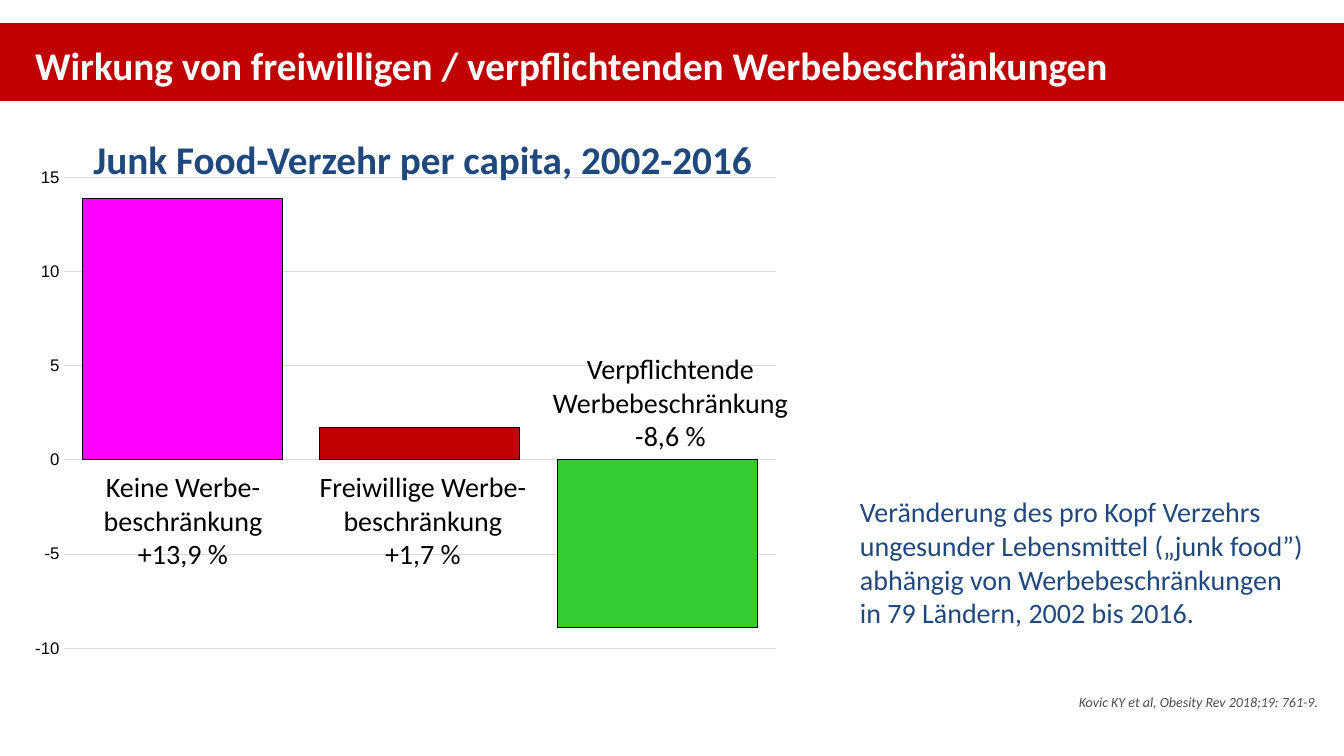
from dataclasses import dataclass

from lxml.etree import SubElement
from pptx import Presentation
from pptx.chart.data import CategoryChartData
from pptx.dml.color import RGBColor
from pptx.enum.chart import XL_CHART_TYPE, XL_TICK_MARK
from pptx.enum.shapes import MSO_SHAPE
from pptx.enum.text import MSO_AUTO_SIZE, PP_ALIGN
from pptx.oxml import parse_xml
from pptx.oxml.ns import nsdecls, qn
from pptx.slide import Slide
from pptx.util import Inches, Pt


@dataclass(frozen=True)
class Theme:
    """Colours, fonts and type sizes of the slide."""
    red: str = "C00000"
    blue: str = "1F497D"
    white: str = "FFFFFF"
    black: str = "000000"
    grey: str = "4D4D4D"
    grid: str = "D9D9D9"
    pink: str = "FF00FF"
    green: str = "33CC33"
    font: str = "Calibri"
    plain: str = "Arial"
    head: int = 28
    body: int = 20
    axis: int = 12
    note: int = 10


THEME = Theme()


@dataclass(frozen=True)
class Label:
    """A text box with one style."""
    box: tuple[float, float, float, float]
    lines: tuple[str, ...]
    size: int = THEME.body
    color: str = THEME.black
    align: PP_ALIGN = PP_ALIGN.CENTER
    wrap: bool = False
    bold: bool = False
    italic: bool = False


@dataclass(frozen=True)
class Bar:
    """One column of the chart."""
    name: str
    value: float
    color: str


BARS = (
    Bar("1", 13.9, THEME.pink),
    Bar("2", 1.7, THEME.red),
    Bar("3", -8.9, THEME.green),
)

TITLE = Label((0.25, 0.36, 12.84, 0.57),
              ("Wirkung von freiwilligen / verpflichtenden Werbebeschränkungen",),
              THEME.head, THEME.white, PP_ALIGN.LEFT, wrap=True, bold=True)

LABELS = (
    Label((8.43, 4.86, 4.65, 1.45),
          ("Veränderung des pro Kopf Verzehrs ungesunder Lebensmittel "
           "(„junk food”) abhängig von Werbebeschränkungen \n"
           "in 79 Ländern, 2002 bis 2016.",),
          color=THEME.blue, align=PP_ALIGN.LEFT, wrap=True),
    Label((0.92, 4.61, 1.79, 1.11), ("Keine Werbe-\nbeschränkung", "+13,9 %")),
    Label((3.06, 4.61, 2.27, 1.11), ("Freiwillige Werbe-\nbeschränkung", "+1,7 %")),
    Label((5.37, 3.44, 2.56, 1.11), ("Verpflichtende\nWerbebeschränkung", "-8,6 %")),
    Label((0.77, 1.29, 6.93, 0.57), ("Junk Food-Verzehr per capita, 2002-2016 ",),
          THEME.head, THEME.blue, bold=True),
    Label((9.19, 6.83, 4.01, 0.27), ("Kovic KY et al, Obesity Rev 2018;19: 761-9. ",),
          THEME.note, THEME.grey, PP_ALIGN.RIGHT, wrap=True, italic=True),
)


def rgb(code: str) -> RGBColor:
    """Turn a hex code into a colour."""
    return RGBColor.from_string(code)


def add_band(slide: Slide) -> None:
    """Draw the red band behind the title."""
    band = slide.shapes.add_shape(MSO_SHAPE.RECTANGLE, Inches(0), Inches(0.24),
                                  Inches(13.33), Inches(0.75))
    band.shadow.inherit = False
    band.fill.solid()
    band.fill.fore_color.rgb = rgb(THEME.red)
    band.line.color.rgb = rgb(THEME.red)
    band.line.width = Pt(2)


def add_label(slide: Slide, label: Label) -> None:
    """Draw one text box."""
    frame = slide.shapes.add_textbox(*map(Inches, label.box)).text_frame
    frame.word_wrap = label.wrap
    frame.auto_size = MSO_AUTO_SIZE.SHAPE_TO_FIT_TEXT
    for at, line in enumerate(label.lines):
        para = frame.add_paragraph() if at else frame.paragraphs[0]
        para.text = line
        para.alignment = label.align
        font = para.font
        font.name, font.size = THEME.font, Pt(label.size)
        font.bold, font.italic = label.bold, label.italic
        font.color.rgb = rgb(label.color)


def add_bars(slide: Slide) -> None:
    """Draw the column chart."""
    data = CategoryChartData()
    data.categories = [bar.name for bar in BARS]
    data.add_series("Series 1", [bar.value for bar in BARS])
    chart = slide.shapes.add_chart(
        XL_CHART_TYPE.COLUMN_CLUSTERED, Inches(0.25), Inches(1.6),
        Inches(7.6), Inches(5.37), data).chart
    chart.has_legend = chart.has_title = False
    chart.font.name, chart.font.size = THEME.font, Pt(THEME.note)
    chart.font.color.rgb = rgb(THEME.black)
    chart.category_axis.visible = False

    axis = chart.value_axis
    axis.minimum_scale, axis.maximum_scale, axis.major_unit = -10, 15, 5
    axis.major_tick_mark = axis.minor_tick_mark = XL_TICK_MARK.NONE
    axis.format.line.fill.background()
    grid = axis.major_gridlines.format.line
    grid.color.rgb, grid.width = rgb(THEME.grid), Pt(0.75)
    font = axis.tick_labels.font
    font.name, font.size = THEME.plain, Pt(THEME.axis)
    font.color.rgb = rgb(THEME.black)

    plot = chart.plots[0]
    plot.gap_width, plot.overlap = 19, -27
    plot.vary_by_categories = False
    row = plot.series[0]
    row.invert_if_negative = False
    for at, bar in enumerate(BARS):
        style = row.points[at].format
        style.fill.solid()
        style.fill.fore_color.rgb = rgb(bar.color)
        style.line.color.rgb = rgb(THEME.black)
        style.line.width = Pt(0.75)

    area = chart.element.find(".//" + qn("c:plotArea"))
    for old in area.findall(qn("c:layout")):
        area.remove(old)
    frame = parse_xml(f"<c:layout {nsdecls('c')}><c:manualLayout/></c:layout>")
    rules = {"layoutTarget": "inner", "xMode": "edge", "yMode": "edge",
             "x": "0.05", "y": "0.03", "w": "0.93", "h": "0.87"}
    for key, val in rules.items():
        SubElement(frame[0], qn(f"c:{key}")).set("val", val)
    area.insert(0, frame)


def main() -> None:
    """Build and save the slide."""
    deck = Presentation()
    deck.slide_width, deck.slide_height = Inches(13.33), Inches(7.5)
    slide = deck.slides.add_slide(deck.slide_layouts[6])
    add_band(slide)
    add_label(slide, TITLE)
    add_bars(slide)
    for label in LABELS:
        add_label(slide, label)
    deck.save("out.pptx")


if __name__ == "__main__":
    main()
